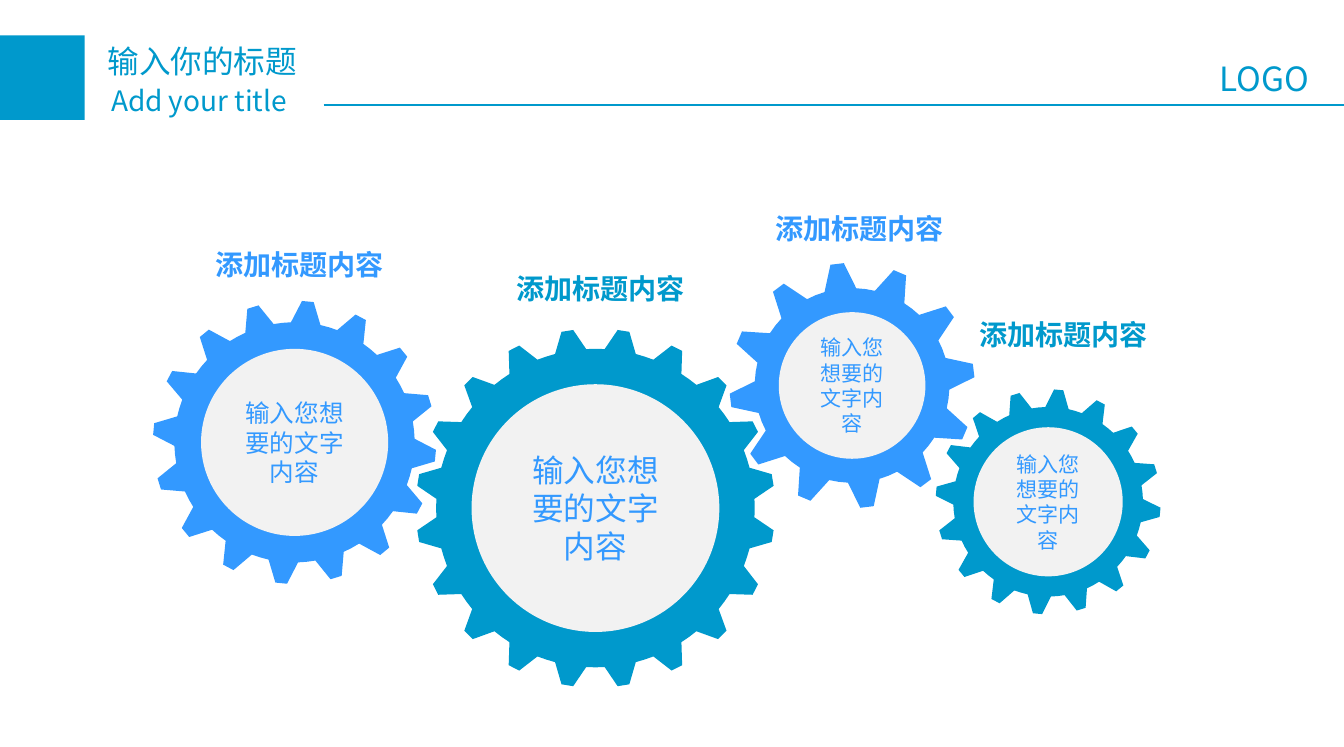
from dataclasses import dataclass
from math import cos, radians, sin

from lxml import etree
from pptx import Presentation
from pptx.dml.color import RGBColor
from pptx.enum.shapes import MSO_CONNECTOR, MSO_SHAPE
from pptx.enum.text import MSO_ANCHOR, MSO_AUTO_SIZE, PP_ALIGN
from pptx.oxml.ns import qn
from pptx.util import Pt

PX = 9144  # one hundredth of an inch
PAGE = (1063, 591)
LEFT, CENTER = PP_ALIGN.LEFT, PP_ALIGN.CENTER
TOP, MIDDLE = MSO_ANCHOR.TOP, MSO_ANCHOR.MIDDLE
NO_FIT = MSO_AUTO_SIZE.NONE
RECTANGLE, OVAL = MSO_SHAPE.RECTANGLE, MSO_SHAPE.OVAL
STRAIGHT = MSO_CONNECTOR.STRAIGHT


@dataclass(frozen=True)
class Theme:
    teal: str = "0099CC"
    blue: str = "3399FF"
    pale: str = "F2F2F2"
    cjk: str = "Noto Sans CJK SC"
    latin: str = "Arial"
    title: int = 18
    subtitle: int = 16
    logo: int = 19
    heading: int = 16
    rule: float = 0.75


THEME = Theme()

TITLE = ("输入你的标题", (75, 28, 173, 40))
SUBTITLE = ("Add your title", (78, 61, 173, 37))
LOGO = ("LOGO", (955, 41, 96, 42))
TITLE_BLOCK = (0, 28, 67, 67)
TITLE_RULE = (256, 83, 1063, 83)

HUB_TEXT = "输入您想要的文字内容"
HEADING_TEXT = "添加标题内容"

# centre, tip radius, root radius, hub radius, teeth,
# degrees of the first tooth clockwise from the top, colour, hub text size
GEARS = [
    ((471, 402), 142, 126, 98, 20, 9, THEME.teal, 18),
    ((674, 305), 97, 77, 58, 12, -7, THEME.blue, 12),
    ((233, 350), 112, 95, 74, 16, 5.4, THEME.blue, 14),
    ((829, 397), 89, 75, 59, 16, 5.4, THEME.teal, 12),
]
# Tooth half-widths as shares of the angle between teeth
TIP_SHARE, ROOT_SHARE = 0.105, 0.315

HEADINGS = [
    ((144, 190, 186, 38), THEME.blue, THEME.cjk),
    ((382, 209, 186, 38), THEME.teal, THEME.latin),
    ((760, 245, 162, 38), THEME.teal, THEME.latin),
    ((587, 161, 186, 38), THEME.blue, THEME.latin),
]


def emu(lengths):
    return [round(length * PX) for length in lengths]


def paint(shape, color):
    shape.fill.solid()
    shape.fill.fore_color.rgb = RGBColor.from_string(color)
    shape.line.fill.background()
    shape.shadow.inherit = False


def write(box, text, *, size, color, font=THEME.cjk, bold=False,
          align=LEFT, anchor=TOP, wrap=True, insets=(10, 5)):
    frame = box.text_frame
    frame.auto_size = NO_FIT
    frame.word_wrap = wrap
    frame.vertical_anchor = anchor
    frame.margin_left = frame.margin_right = insets[0] * PX
    frame.margin_top = frame.margin_bottom = insets[1] * PX
    para = frame.paragraphs[0]
    para.alignment = align
    span = para.add_run()
    span.text = text
    span.font.size = Pt(size)
    span.font.bold = bold
    span.font.name = font
    span.font.color.rgb = RGBColor.from_string(color)
    etree.SubElement(span.font._element, qn("a:ea"), typeface=THEME.cjk)


def gear_outline(center, tip, root, teeth, phase):
    step = 360 / teeth
    tooth = [(root, -ROOT_SHARE), (tip, -TIP_SHARE), (tip, TIP_SHARE),
             (root, ROOT_SHARE), (root, 0.5)]
    for index in range(teeth):
        for radius, share in tooth:
            angle = radians(phase + (index + share) * step)
            yield emu((center[0] + radius * sin(angle),
                       center[1] - radius * cos(angle)))


def add_gear(page, center, tip, root, hub_radius, teeth, phase, color, size):
    start, *others = gear_outline(center, tip, root, teeth, phase)
    builder = page.shapes.build_freeform(*start, scale=1.0)
    builder.add_line_segments(others, close=True)
    paint(builder.convert_to_shape(), color)
    hub = page.shapes.add_shape(OVAL, *emu((
        center[0] - hub_radius, center[1] - hub_radius,
        2 * hub_radius, 2 * hub_radius)))
    paint(hub, THEME.pale)
    write(hub, HUB_TEXT, size=size, color=THEME.blue, font=THEME.latin,
          align=CENTER, anchor=MIDDLE)


def add_header(page):
    block = page.shapes.add_shape(RECTANGLE, *emu(TITLE_BLOCK))
    paint(block, THEME.teal)

    text, place = TITLE
    title = page.shapes.title
    title.left, title.top, title.width, title.height = emu(place)
    write(title, text, size=THEME.title, color=THEME.teal)

    text, place = SUBTITLE
    write(page.shapes.add_textbox(*emu(place)), text,
          size=THEME.subtitle, color=THEME.teal)

    rule = page.shapes.add_connector(STRAIGHT, *emu(TITLE_RULE))
    rule.line.color.rgb = RGBColor.from_string(THEME.teal)
    rule.line.width = Pt(THEME.rule)
    etree.SubElement(rule._element.spPr, qn("a:effectLst"))

    text, place = LOGO
    write(page.shapes.add_textbox(*emu(place)), text,
          size=THEME.logo, color=THEME.teal, wrap=False)


def main():
    deck = Presentation()
    deck.slide_width, deck.slide_height = emu(PAGE)
    page = deck.slides.add_slide(deck.slide_layouts[5])
    add_header(page)
    for gear in GEARS:
        add_gear(page, *gear)
    for place, color, font in HEADINGS:
        write(page.shapes.add_textbox(*emu(place)), HEADING_TEXT,
              size=THEME.heading, color=color, font=font, bold=True,
              align=CENTER, insets=(11, 6))
    deck.save("out.pptx")


if __name__ == "__main__":
    main()
